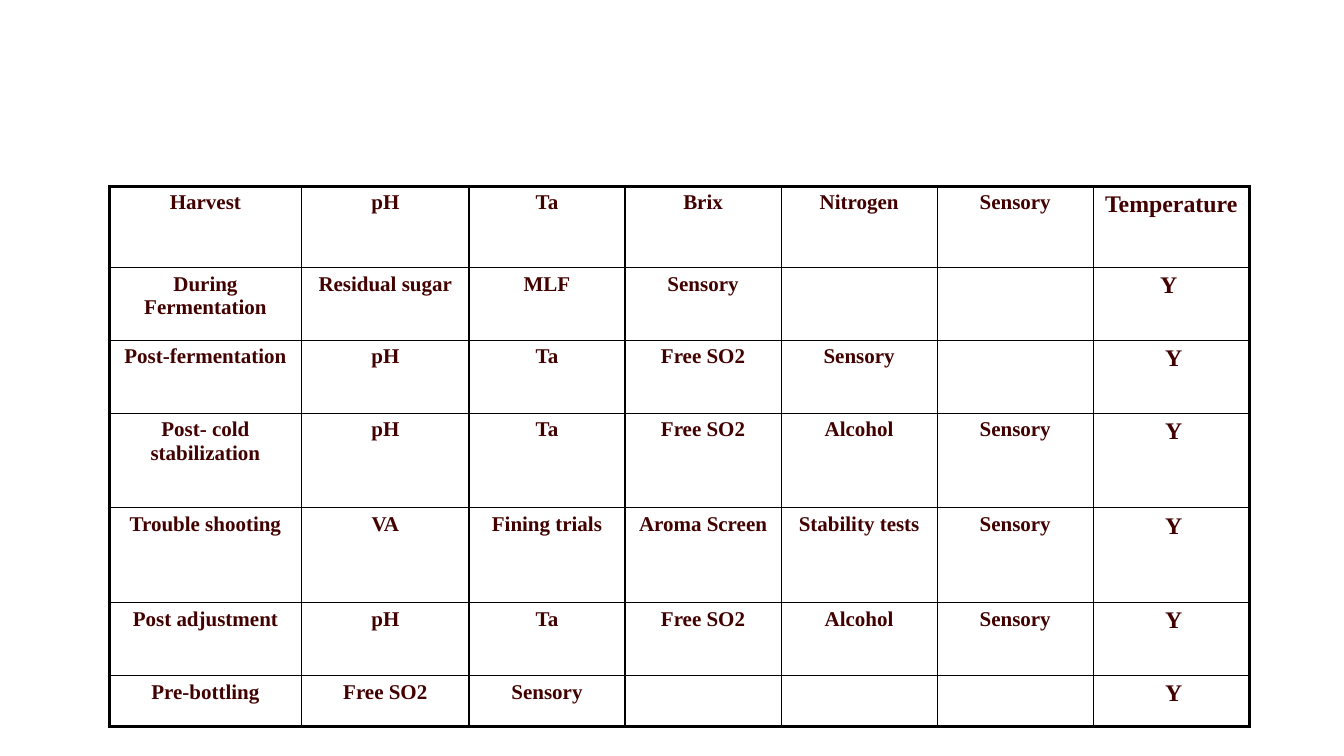
import pptx
import pptx.dml.color
import pptx.enum.text
import pptx.oxml
import pptx.oxml.ns
import pptx.util

Pt = pptx.util.Pt
RGBColor = pptx.dml.color.RGBColor
MAROON = RGBColor(0x42, 0x00, 0x00)
BLACK = RGBColor(0x00, 0x00, 0x00)

COLUMN_WIDTHS = [137.5, 119.5] + [111.5] * 5
ROW_HEIGHTS = [58, 52.1, 52.1, 67.6, 67.6, 52.1, 36.7]
WINE_TESTS = [
    ["Harvest", "pH", "Ta", "Brix", "Nitrogen", "Sensory", "Temperature "],
    ["During Fermentation", "Residual sugar", "MLF", "Sensory", "", "", "Y "],
    ["Post-fermentation", "pH", "Ta", "Free SO2", "Sensory", "", " Y"],
    ["Post- cold stabilization", "pH", "Ta", "Free SO2", "Alcohol", "Sensory", " Y"],
    ["Trouble shooting", "VA", "Fining trials", "Aroma Screen", "Stability tests", "Sensory", " Y"],
    ["Post adjustment", "pH", "Ta", "Free SO2", "Alcohol", "Sensory", " Y"],
    ["Pre-bottling", "Free SO2", "Sensory", "", "", "", " Y"],
]
LAST_ROW = len(ROW_HEIGHTS) - 1
LAST_COLUMN = len(COLUMN_WIDTHS) - 1


def add_border(cell, side, width):
    cell._tc.get_or_add_tcPr().append(pptx.oxml.parse_xml(
        f'<a:{side} {pptx.oxml.ns.nsdecls("a")} w="{Pt(width)}">'
        f'<a:solidFill><a:srgbClr val="{BLACK}"/></a:solidFill>'
        f'<a:prstDash val="solid"/></a:{side}>'))


presentation = pptx.Presentation()
presentation.slide_width = Pt(960)
presentation.slide_height = Pt(540)
slide = presentation.slides.add_slide(presentation.slide_layouts[6])

table = slide.shapes.add_table(
    len(ROW_HEIGHTS), len(COLUMN_WIDTHS), Pt(78), Pt(133),
    Pt(sum(COLUMN_WIDTHS)), Pt(sum(ROW_HEIGHTS))).table
table.first_row = False
table.horz_banding = False
for column, width in zip(table.columns, COLUMN_WIDTHS):
    column.width = Pt(width)
for row, height in zip(table.rows, ROW_HEIGHTS):
    row.height = Pt(height)

for row_index, row_texts in enumerate(WINE_TESTS):
    for column_index, text in enumerate(row_texts):
        cell = table.cell(row_index, column_index)
        outer_sides = {
            "lnL": column_index == 0,
            "lnR": column_index == LAST_COLUMN,
            "lnT": row_index == 0,
            "lnB": row_index == LAST_ROW,
        }
        for side, is_outer in outer_sides.items():
            add_border(cell, side, 2.25 if is_outer else 1)
        cell.fill.background()
        cell.text = text
        paragraph = cell.text_frame.paragraphs[0]
        paragraph.alignment = pptx.enum.text.PP_ALIGN.CENTER
        font_format = {
            "name": "Times New Roman",
            "size": Pt(17 if column_index == LAST_COLUMN else 15),
            "bold": True,
        }
        for run in paragraph.runs:
            for attribute, value in font_format.items():
                setattr(run.font, attribute, value)
            run.font.color.rgb = MAROON

presentation.save("out.pptx")
